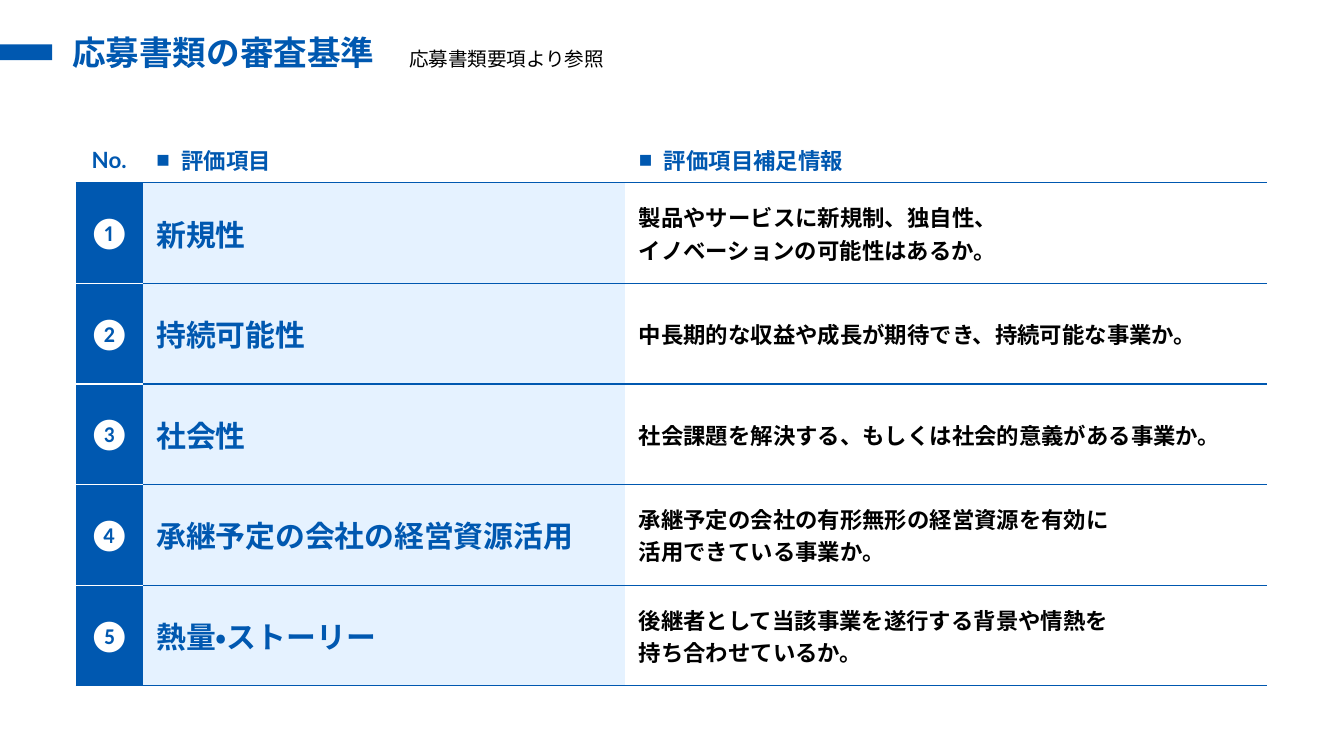
from lxml.etree import SubElement
from pptx import Presentation
from pptx.dml.color import RGBColor
from pptx.enum.lang import MSO_LANGUAGE_ID
from pptx.enum.shapes import MSO_SHAPE
from pptx.enum.text import MSO_ANCHOR, MSO_AUTO_SIZE, PP_ALIGN
from pptx.oxml.ns import qn
from pptx.util import Pt

COLORS = {"blue": "0058B0", "pale": "E5F2FF", "white": "FFFFFF", "black": "000000"}
COL_WIDTHS = [36, 258.5, 344]
HEADER_HEIGHT = 25
ROW_HEIGHT = 53.9
HEADERS = ["No.", "評価項目", "評価項目補足情報"]
CRITERIA = [
    ("❶", "新規性", ["製品やサービスに新規制、独自性、", "イノベーションの可能性はあるか。"]),
    ("❷", "持続可能性", ["中長期的な収益や成長が期待でき、持続可能な事業か。"]),
    ("❸", "社会性", ["社会課題を解決する、もしくは社会的意義がある事業か。"]),
    ("❹", "承継予定の会社の経営資源活用",
     ["承継予定の会社の有形無形の経営資源を有効に", "活用できている事業か。"]),
    ("❺", "熱量・ストーリー",
     ["後継者として当該事業を遂行する背景や情熱を", "持ち合わせているか。"]),
]


def rgb(name):
    return RGBColor.from_string(COLORS[name])


def add_run(p, text, size, color, bold=False, font="Lato"):
    r = p.add_run()
    r.text = text
    r.font.size = Pt(size)
    r.font.name = font
    r.font.bold = bold
    r.font.color.rgb = rgb(color)
    r.font.language_id = MSO_LANGUAGE_ID.JAPANESE


def add_text(s, box, text, size, color, anchor=MSO_ANCHOR.TOP, spacing=None, **style):
    tf = s.shapes.add_textbox(*[Pt(v) for v in box]).text_frame
    tf.word_wrap = False
    tf.auto_size = MSO_AUTO_SIZE.SHAPE_TO_FIT_TEXT
    tf.vertical_anchor = anchor
    p = tf.paragraphs[0]
    p.line_spacing = spacing
    add_run(p, text, size, color, **style)


def add_accent_bar(s):
    sp = s.shapes.add_shape(MSO_SHAPE.RECTANGLE, 0, Pt(23.75), Pt(28), Pt(8.5))
    sp.shadow.inherit = False
    sp.fill.solid()
    sp.fill.fore_color.rgb = rgb("blue")
    sp.line.fill.background()


def set_bullet(p):
    pPr = p._p.get_or_add_pPr()
    pPr.set("marL", str(Pt(13.5)))
    pPr.set("indent", str(-Pt(13.5)))
    SubElement(pPr, qn("a:buFont"), typeface="Arial")
    SubElement(pPr, qn("a:buChar"), char="■")


def set_borders(cell, top, bottom):
    tcPr = cell._tc.get_or_add_tcPr()
    for side, color in (("L", None), ("R", None), ("T", top), ("B", bottom)):
        ln = SubElement(tcPr, qn("a:ln" + side), w=str(Pt(0.75)))
        if color:
            fill = SubElement(ln, qn("a:solidFill"))
            SubElement(fill, qn("a:srgbClr"), val=COLORS[color])
        else:
            SubElement(ln, qn("a:noFill"))


def fill_cell(cell, lines, size, color, fill, top, bottom,
              bold=True, centered=False, bullet=False):
    set_borders(cell, top, bottom)
    cell.fill.solid()
    cell.fill.fore_color.rgb = rgb(fill)
    cell.vertical_anchor = MSO_ANCHOR.MIDDLE
    tf = cell.text_frame
    for i, line in enumerate(lines):
        p = tf.add_paragraph() if i else tf.paragraphs[0]
        p.alignment = PP_ALIGN.CENTER if centered else PP_ALIGN.LEFT
        if bullet:
            set_bullet(p)
        add_run(p, line, size, color, bold)


def add_criteria_table(s):
    height = HEADER_HEIGHT + ROW_HEIGHT * len(CRITERIA)
    table = s.shapes.add_table(len(CRITERIA) + 1, len(COL_WIDTHS), Pt(40.5), Pt(73),
                               Pt(sum(COL_WIDTHS)), Pt(height)).table
    table.first_row = table.horz_banding = False
    for column, width in zip(table.columns, COL_WIDTHS):
        column.width = Pt(width)
    for i, row in enumerate(table.rows):
        row.height = Pt(ROW_HEIGHT if i else HEADER_HEIGHT)

    for i, header in enumerate(HEADERS):
        fill_cell(table.cell(0, i), [header], 12, "blue", "white", None, "blue",
                  centered=i == 0, bullet=i > 0)
    for i, (number, item, details) in enumerate(CRITERIA, 1):
        top = "blue" if i == 1 else "white"
        bottom = "blue" if i == len(CRITERIA) else "white"
        fill_cell(table.cell(i, 0), [number], 16, "white", "blue", top, bottom,
                  bold=False, centered=True)
        fill_cell(table.cell(i, 1), [item], 16, "blue", "pale", "blue", "blue")
        fill_cell(table.cell(i, 2), details, 12, "black", "white", "blue", "blue")


def main():
    prs = Presentation()
    prs.slide_width, prs.slide_height = Pt(720), Pt(405)
    s = prs.slides.add_slide(prs.slide_layouts[6])
    add_accent_bar(s)
    add_text(s, (31.5, 15.75, 178, 27.5), "応募書類の審査基準", 18, "blue",
             anchor=MSO_ANCHOR.MIDDLE, spacing=0.9, bold=True, font="Arial")
    add_criteria_table(s)
    add_text(s, (212.25, 21.5, 120, 20), "応募書類要項より参照", 10.5, "black")
    prs.save("out.pptx")


if __name__ == "__main__":
    main()
